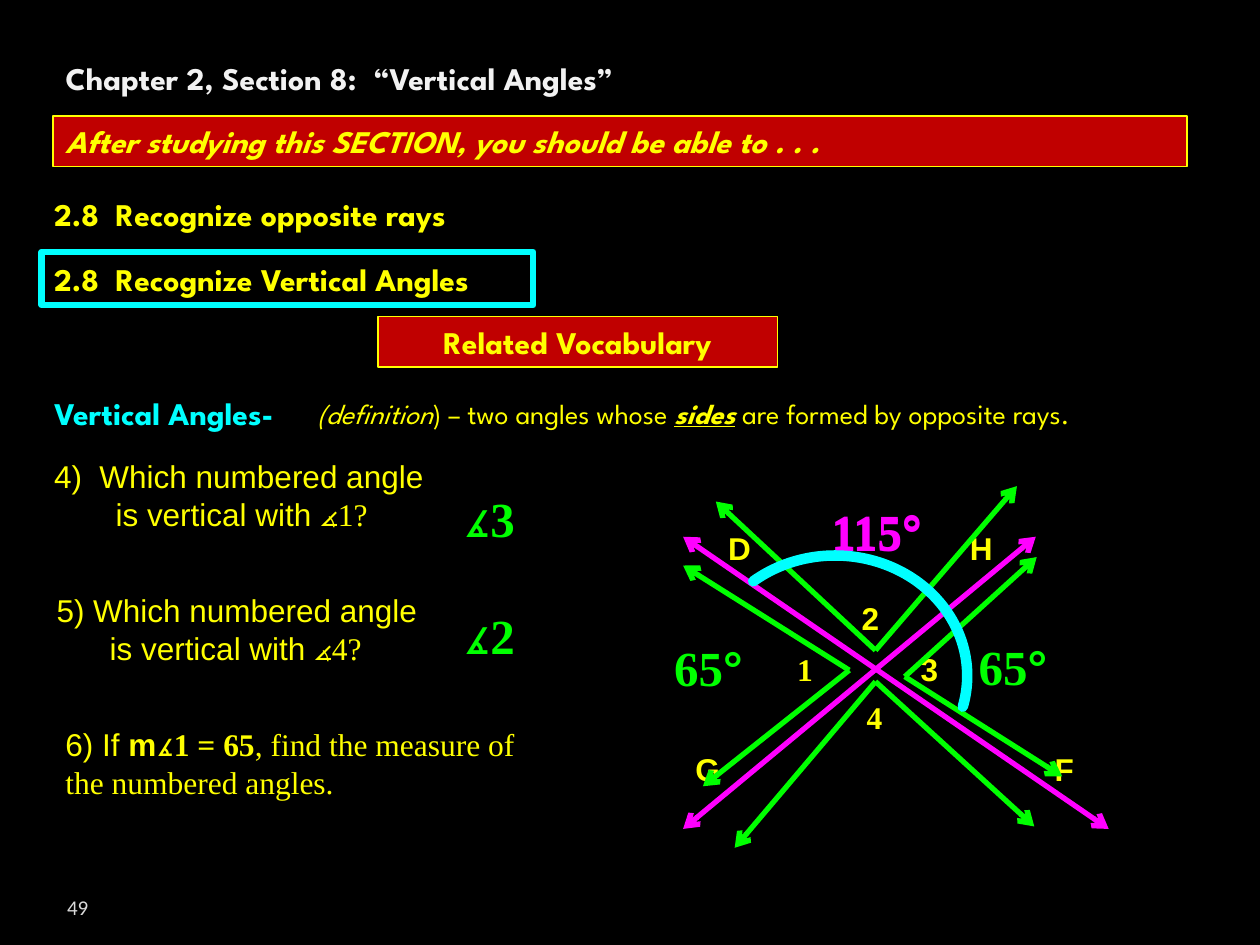
from lxml import etree
from pptx import Presentation
from pptx.dml.color import RGBColor
from pptx.enum.shapes import MSO_CONNECTOR, MSO_SHAPE
from pptx.enum.text import MSO_ANCHOR, PP_ALIGN
from pptx.oxml.ns import qn
from pptx.util import Cm, Pt

LEFT, CENTER, RIGHT = PP_ALIGN.LEFT, PP_ALIGN.CENTER, PP_ALIGN.RIGHT
TOP, MIDDLE, BOTTOM = MSO_ANCHOR.TOP, MSO_ANCHOR.MIDDLE, MSO_ANCHOR.BOTTOM
RECT, ARC = MSO_SHAPE.RECTANGLE, MSO_SHAPE.ARC
STRAIGHT = MSO_CONNECTOR.STRAIGHT

BLACK = RGBColor(0x00, 0x00, 0x00)
YELLOW = RGBColor(0xFF, 0xFF, 0x00)
CYAN = RGBColor(0x00, 0xFF, 0xFF)
GREEN = RGBColor(0x00, 0xFF, 0x00)
MAGENTA = RGBColor(0xFF, 0x00, 0xFF)
RED = RGBColor(0xC0, 0x00, 0x00)
OFF_WHITE = RGBColor(0xF2, 0xF2, 0xF2)
GREY = RGBColor(0xD9, 0xD9, 0xD9)

SPARTAN, ARIAL, TIMES, CALIBRI = "League Spartan", "Arial", "Times New Roman", "Calibri"

# All positions are in centimetres: left, top, width, height
TITLE = "Chapter 2, Section 8:  “Vertical Angles”"
TITLE_BOX = (1.07, 1.07, 22.86, 1.02)

HEADINGS = [
    ("2.8  Recognize opposite rays", (0.84, 3.81, 11.43, 1.02), YELLOW),
    ("2.8  Recognize Vertical Angles", (0.84, 5.11, 11.43, 1.02), YELLOW),
    ("Vertical Angles-", (0.84, 7.82, 5.72, 1.02), CYAN),
]
BANNERS = [
    ("Related Vocabulary", (7.62, 6.38, 8.05, 1.02), CENTER, False),
    ("After studying this SECTION, you should be able to . . .",
     (1.07, 2.34, 22.86, 1.02), LEFT, True),
]
HIGHLIGHT_BOX = (0.84, 5.08, 9.91, 1.07)

# A run is its text and whatever differs from the paragraph font
DEFINITION = [("(definition", {"italic": True}), (") – two angles whose ", {}),
              ("sides", {"bold": True, "italic": True, "underline": True}),
              (" are formed by opposite rays.", {})]
DEFINITION_BOX = (6.15, 7.87, 19.05, 0.94)

# Box, indent of the second line, lines of runs
QUESTIONS = [
    ((0.84, 9.09, 8.89, 1.8), 1.24,
     [[("4)  Which numbered angle", {})],
      [("is vertical with ", {}), ("∡1?", {"name": TIMES})]]),
    ((0.89, 11.79, 8.2, 1.8), 1.07,
     [[("5) Which numbered angle", {})],
      [("is vertical with ", {}), ("∡4?", {"name": TIMES})]]),
    ((1.07, 14.5, 9.7, 1.8), 0,
     [[("6) If ", {}), ("m", {"bold": True}),
       ("∡1 = 65", {"name": TIMES, "bold": True}),
       (", find the measure of the numbered angles.", {"name": TIMES})]]),
]
ANSWERS = [("∡3", 9.09, 9.73), ("∡2", 9.09, 12.09)]
MEASURES = [("65", 13.34, 12.73, GREEN), ("65", 19.48, 12.7, GREEN),
            ("115", 16.51, 9.96, MAGENTA), ("115", 16.51, 10.01, MAGENTA)]

POINT_LABELS = [("F", 21.01, 14.99), ("H", 19.3, 10.54),
                ("D", 14.43, 10.54), ("G", 13.77, 14.99)]
ANGLE_NUMBERS = [("1", 15.82, 12.98, TIMES), ("2", 17.12, 11.96, ARIAL),
                 ("3", 18.31, 12.98, ARIAL), ("4", 17.22, 13.94, TIMES)]
CROSSING_LINES = [((13.77, 16.71), (20.88, 10.82)),
                  ((22.35, 16.71), (13.77, 10.82))]
# Vertex of each angle and the ends of its two rays
ANGLES = [
    ((17.12, 13.51), [(13.77, 11.4), (14.17, 15.85)]),
    ((18.24, 13.64), [(20.9, 11.23), (21.41, 15.65)]),
    ((17.65, 13.74), [(14.81, 17.09), (20.85, 16.66)]),
    ((17.65, 13.11), [(14.43, 10.11), (20.5, 9.8)]),
]
ARC_BOX = (14.17, 11.2, 5.33, 4.85)
ARC_DEGREES = (229.09, 13.59)


def cm(values):
    return [Cm(v) for v in values]


def write(p, runs, font, size, color, bold=False, italic=False, align=LEFT):
    """Fill a paragraph with runs, or with one plain string."""
    p.alignment = align
    f = p.font
    f.name, f.size, f.bold, f.italic = font, Pt(size), bold, italic
    f.color.rgb = color
    for text, changes in [(runs, {})] if isinstance(runs, str) else runs:
        r = p.add_run()
        r.text = text
        for key, value in changes.items():
            setattr(r.font, key, value)


def add_text(slide, box, runs, font, size, color, **style):
    tf = slide.shapes.add_textbox(*cm(box)).text_frame
    tf.word_wrap = True
    write(tf.paragraphs[0], runs, font, size, color, **style)
    return tf


def add_outlined(slide, kind, box, color, width, fill=None):
    sp = slide.shapes.add_shape(kind, *cm(box))
    sp.shadow.inherit = False
    if fill is None:
        sp.fill.background()
    else:
        sp.fill.solid()
        sp.fill.fore_color.rgb = fill
    sp.line.color.rgb = color
    sp.line.width = Pt(width)
    return sp


def add_arrow(slide, start, end, color, both_ends=False):
    sp = slide.shapes.add_connector(STRAIGHT, *cm(start + end))
    sp.line.color.rgb = color
    sp.line.width = Pt(3)
    ln = sp.line._get_or_add_ln()
    for tag in ["a:headEnd", "a:tailEnd"] if both_ends else ["a:tailEnd"]:
        etree.SubElement(ln, qn(tag), type="arrow")
    etree.SubElement(sp._element.spPr, qn("a:effectLst"))


def add_lesson(slide):
    sp = slide.shapes.title
    sp.left, sp.top, sp.width, sp.height = cm(TITLE_BOX)
    sp.text_frame.vertical_anchor = TOP
    write(sp.text_frame.paragraphs[0], TITLE, SPARTAN, 18, OFF_WHITE, bold=True)

    for text, box, color in HEADINGS:
        add_text(slide, box, text, SPARTAN, 18, color, bold=True)
    for text, box, align, italic in BANNERS:
        tf = add_outlined(slide, RECT, box, YELLOW, 0.75, RED).text_frame
        tf.word_wrap = True
        tf.vertical_anchor = MIDDLE
        write(tf.paragraphs[0], text, SPARTAN, 18, YELLOW,
              bold=True, italic=italic, align=align)
    add_outlined(slide, RECT, HIGHLIGHT_BOX, CYAN, 3.78)
    add_text(slide, DEFINITION_BOX, DEFINITION, SPARTAN, 16, YELLOW)

    for box, indent, (first, *rest) in QUESTIONS:
        tf = add_text(slide, box, first, ARIAL, 18, YELLOW)
        for line in rest:
            p = tf.add_paragraph()
            write(p, line, ARIAL, 18, YELLOW)
            p._p.get_or_add_pPr().set("marL", str(Cm(indent)))

    tf = add_text(slide, (0, 17.78, 2.03, 0.76), "49", CALIBRI, 12, GREY, align=RIGHT)
    tf.vertical_anchor = BOTTOM
    tf.margin_bottom = 0


def add_diagram(slide):
    for start, end in CROSSING_LINES:
        add_arrow(slide, start, end, MAGENTA, both_ends=True)
    for text, x, y in POINT_LABELS:
        add_text(slide, (x, y, 2.08, 1.73), text, ARIAL, 18, YELLOW, bold=True)
    for text, x, y, font in ANGLE_NUMBERS:
        add_text(slide, (x, y, 1.09, 1.02), text, font, 18, YELLOW, bold=True)
    for vertex, ends in ANGLES:
        for end in ends:
            add_arrow(slide, vertex, end, GREEN)
    for text, x, y in ANSWERS:
        add_text(slide, (x, y, 2.11, 1.45), text, TIMES, 28, GREEN, bold=True)
    for text, x, y, color in MEASURES:
        width = 2.11 if len(text) == 2 else 2.57
        add_text(slide, (x, y, width, 1.45), [(text, {}), ("°", {"name": ARIAL})],
                 TIMES, 28, color, bold=True)

    arc = add_outlined(slide, ARC, ARC_BOX, CYAN, 6)
    arc.line._get_or_add_ln().set("cap", "rnd")
    for i, degrees in enumerate(ARC_DEGREES):
        arc.adjustments[i] = degrees * 0.6  # 60000 units a degree, scaled by 100000


def main():
    prs = Presentation()
    prs.slide_width, prs.slide_height = Cm(25.4), Cm(19.05)
    slide = prs.slides.add_slide(prs.slide_layouts[5])
    slide.background.fill.solid()
    slide.background.fill.fore_color.rgb = BLACK
    add_lesson(slide)
    add_diagram(slide)
    prs.save("out.pptx")


if __name__ == "__main__":
    main()
